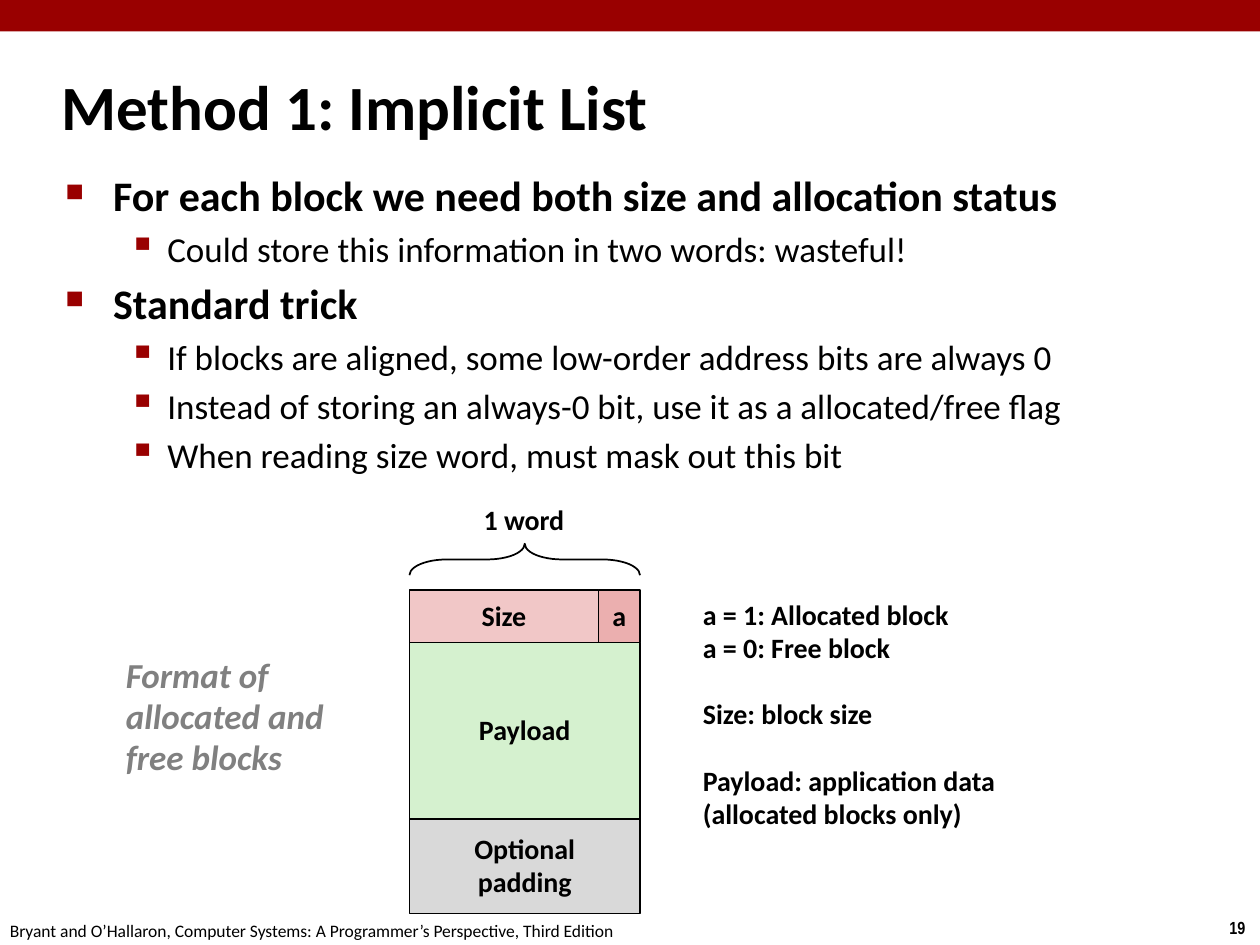
from lxml.etree import SubElement
from pptx import Presentation
from pptx.dml.color import RGBColor
from pptx.enum.shapes import MSO_SHAPE
from pptx.enum.text import MSO_ANCHOR, PP_ALIGN
from pptx.oxml.ns import qn
from pptx.util import Inches, Pt

COLORS = {
    "black": "000000", "red": "990000", "gray": "808080",
    "size": "F1C7C7", "flag": "EBAFAF", "payload": "D5F1CF", "padding": "D9D9D9",
}
# Per outline level: text size, bold, left margin, hanging indent, bullet, bullet %
LEVELS = [
    (24, True, 0.38, 0.38, "■", 60),
    (20, False, 0.81, 0.31, "▪", 110),
]


def rgb(name):
    return RGBColor.from_string(COLORS[name])


def apply(target, values):
    for name, value in values.items():
        setattr(target, name, value)


class SlideBuilder:
    """Holds the text style and the current slide."""

    def __init__(self, slide):
        self.slide = slide
        self.style = {"name": "Calibri", "size": Pt(16), "bold": True}

    def fill_text(self, frame, lines, color="black", paragraph_style=None, **font):
        """Fill a frame with one paragraph per line."""
        paragraphs = []
        for i, line in enumerate(lines):
            paragraph = frame.add_paragraph() if i else frame.paragraphs[0]
            apply(paragraph, paragraph_style or {})
            run = paragraph.add_run()
            run.text = line
            apply(run.font, {**self.style, **font})
            run.font.color.rgb = rgb(color)
            paragraphs.append(paragraph)
        return paragraphs

    def text(self, box, lines, wrap=False, anchor=MSO_ANCHOR.TOP, **options):
        frame = self.slide.shapes.add_textbox(*map(Inches, box)).text_frame
        apply(frame, {"word_wrap": wrap, "vertical_anchor": anchor})
        return self.fill_text(frame, lines, **options)

    def shape(self, kind, box, fill=None, line="black"):
        shape = self.slide.shapes.add_shape(kind, *map(Inches, box))
        shape.shadow.inherit = False
        if fill:
            shape.fill.solid()
            shape.fill.fore_color.rgb = rgb(fill)
        else:
            shape.fill.background()
        if line:
            shape.line.color.rgb = rgb(line)
            shape.line.width = Pt(1)
        else:
            shape.line.fill.background()
        return shape

    def field(self, box, fill, lines):
        """A labelled part of the memory block."""
        frame = self.shape(MSO_SHAPE.RECTANGLE, box, fill).text_frame
        apply(frame, {"word_wrap": False, "vertical_anchor": MSO_ANCHOR.MIDDLE})
        self.fill_text(frame, lines, paragraph_style={
            "alignment": PP_ALIGN.CENTER, "line_spacing": 0.98})

    def outline(self, box, items):
        """A bulleted list of (level, text) items."""
        paragraphs = self.text(box, [text for _, text in items], wrap=True)
        for paragraph, (level, _) in zip(paragraphs, items):
            size, bold, margin, hanging, bullet, percent = LEVELS[level]
            apply(paragraph, {"level": level, "space_before": Pt(size * 0.2)})
            apply(paragraph.runs[0].font, {"size": Pt(size), "bold": bold})
            props = paragraph._p.get_or_add_pPr()
            props.set("marL", str(Inches(margin)))
            props.set("indent", str(-Inches(hanging)))
            bullet_color = SubElement(props, qn("a:buClr"))
            SubElement(bullet_color, qn("a:srgbClr"), val=COLORS["red"])
            SubElement(props, qn("a:buSzPct"), val=str(percent * 1000))
            SubElement(props, qn("a:buChar"), char=bullet)


def main():
    deck = Presentation()
    deck.slide_width, deck.slide_height = Inches(10), Inches(7.5)
    page = SlideBuilder(deck.slides.add_slide(deck.slide_layouts[6]))
    tight = {"line_spacing": 0.98}

    # Top band and footer
    page.shape(MSO_SHAPE.RECTANGLE, (0, 0, 10, 0.25), "red", None)
    page.text((9.66, 7.23, 0.34, 0.27), ["19"], name="Arial Narrow", size=Pt(10))
    page.text((-0.02, 7.25, 5.08, 0.27),
              ["Bryant and O’Hallaron, Computer Systems: "
               "A Programmer’s Perspective, Third Edition"],
              size=Pt(10), bold=False)

    # Title and outline
    page.text((0.39, 0.52, 7.21, 0.63), ["Method 1: Implicit List"], wrap=True,
              anchor=MSO_ANCHOR.MIDDLE, size=Pt(36))
    page.outline((0.42, 1.3, 9.03, 2.36), [
        (0, "For each block we need both size and allocation status"),
        (1, "Could store this information in two words: wasteful!"),
        (0, "Standard trick"),
        (1, "If blocks are aligned, some low-order address bits are always 0"),
        (1, "Instead of storing an always-0 bit, use it as a allocated/free flag"),
        (1, "When reading size word, must mask out this bit"),
    ])

    # Memory block: header row, payload, padding
    left, top, width = 3.25, 4.68, 1.83
    header, size_width, payload, padding = 0.42, 1.5, 1.4, 0.75
    page.field((left, top, size_width, header), "size", ["Size"])
    page.field((left + size_width, top, width - size_width, header), "flag", ["a"])
    page.field((left, top + header, width, payload), "payload", ["Payload"])
    page.field((left, top + header + payload, width, padding), "padding",
               ["Optional", "padding"])

    # Brace over the block, turned to point up
    depth, brace_middle = 0.25, 4.44
    brace = page.shape(MSO_SHAPE.RIGHT_BRACE, (
        left + (width - depth) / 2, brace_middle - width / 2, depth, width))
    brace.rotation = 270
    brace.adjustments[0] = 1.19
    page.text((3.74, 3.95, 0.85, 0.37), ["1 word"], paragraph_style=tight)

    # Caption and legend
    page.text((0.9, 5.15, 1.78, 1.09), ["Format of", "allocated and", "free blocks"],
              color="gray", paragraph_style=tight, size=Pt(20), italic=True)
    legend = page.text((5.48, 4.71, 2.55, 2.22), [
        "a = 1: Allocated block", "a = 0: Free block", "Size: block size",
        "Payload: application data", "(allocated blocks only)",
    ], paragraph_style=tight)
    for group_start in legend[2:4]:
        group_start.space_before = Pt(19)

    deck.save("out.pptx")


if __name__ == "__main__":
    main()
